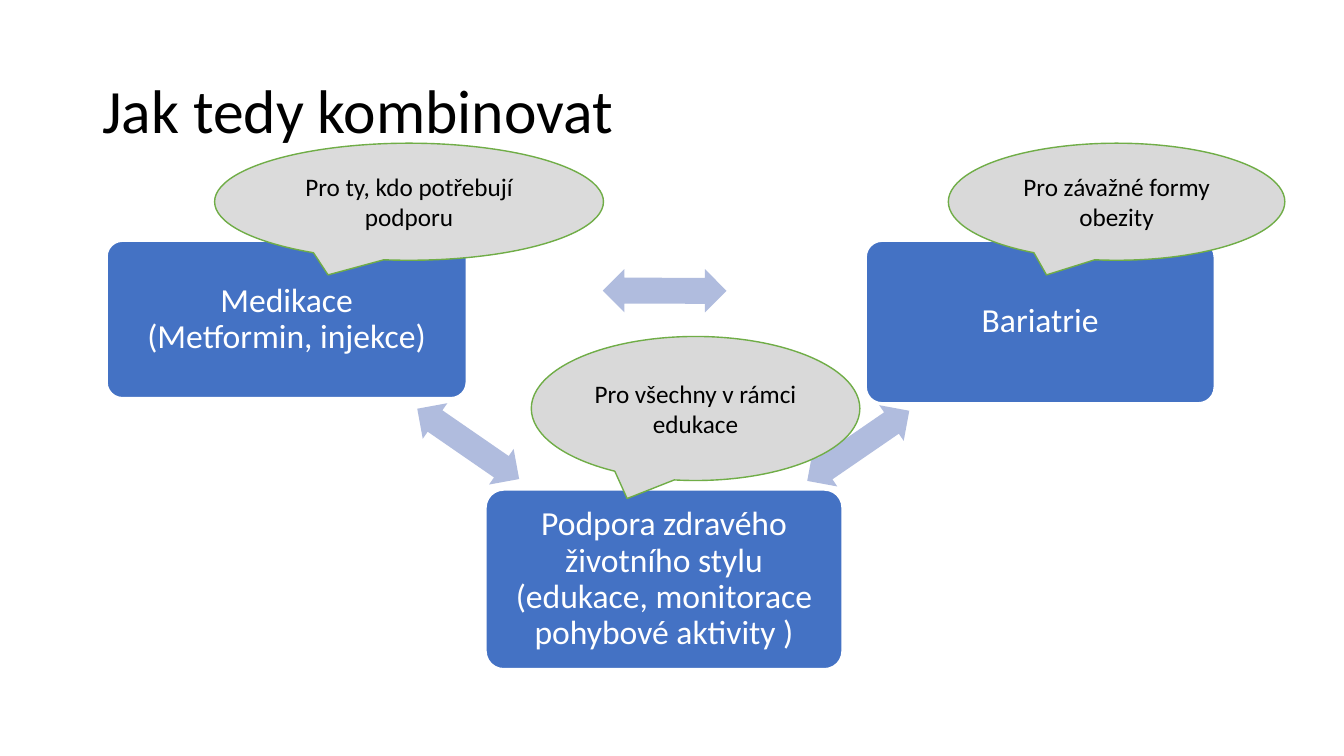
from dataclasses import dataclass

from pptx import Presentation
from pptx.dml.color import RGBColor as Rgb
from pptx.enum.shapes import MSO_SHAPE as Kind
from pptx.enum.text import MSO_ANCHOR as Anchor, PP_ALIGN as Align
from pptx.shapes.autoshape import Shape
from pptx.slide import Slide
from pptx.util import Cm, Pt

HUES = {
    "black": "000000", "white": "FFFFFF", "blue": "4472C4",
    "pale": "B0BCDE", "green": "70AD47", "grey": "D9D9D9", "silver": "DBDBDB",
}
FACE = "Calibri"
INSET = Cm(0.25)
ARROW = (3.12, 1.09)


@dataclass(frozen=True)
class Step:
    text: str
    box: tuple[float, float, float, float]


@dataclass(frozen=True)
class Arrow:
    left: float
    top: float
    turn: float


@dataclass(frozen=True)
class Bubble:
    text: str
    box: tuple[float, float, float, float]
    fill: str = "grey"


# Each step of the cycle is followed by the arrow leading on from it.
CYCLE = [
    Step("Podpora zdravého životního stylu\v(edukace, monitorace pohybové aktivity )",
         (12.24, 12.34, 8.99, 4.52)),
    Arrow(20.07, 10.69, 325.5),
    Step("Bariatrie", (21.82, 6.07, 8.79, 4.09)),
    Arrow(15.19, 6.78, 180.1),
    Step("Medikace\v(Metformin, injekce)", (2.69, 6.07, 9.07, 3.96)),
    Arrow(10.24, 10.64, 34.6),
]
NOTES = [
    Bubble("Pro všechny v rámci edukace", (13.39, 8.48, 8.28, 3.63)),
    Bubble("Pro ty, kdo potřebují podporu", (5.41, 3.61, 9.8, 2.95), "silver"),
    Bubble("Pro závažné formy obezity", (23.9, 3.61, 8.48, 2.95)),
]


def hue(name: str) -> Rgb:
    return Rgb.from_string(HUES[name])


def apply(item: object, form: dict) -> None:
    for key, value in form.items():
        setattr(item, key, value)


def write(shape: Shape, text: str, size: int, ink: str,
          align: Align, space: float = 1.0) -> None:
    frame = shape.text_frame
    apply(frame, {"word_wrap": True, "vertical_anchor": Anchor.MIDDLE, "text": text})
    para = frame.paragraphs[0]
    apply(para, {"alignment": align, "line_spacing": space})
    apply(para.font, {"name": FACE, "size": Pt(size)})
    para.font.color.rgb = hue(ink)


def add(slide: Slide, kind: Kind, box: tuple, fill: str,
        edge: str | None = None, width: float = 1) -> Shape:
    """Add a flat shape, with an outline only if an edge colour is given."""
    shape = slide.shapes.add_shape(kind, *map(Cm, box))
    shape.shadow.inherit = False
    shape.fill.solid()
    shape.fill.fore_color.rgb = hue(fill)
    if edge:
        shape.line.color.rgb = hue(edge)
        shape.line.width = Pt(width)
    else:
        shape.line.fill.background()
    return shape


def add_step(slide: Slide, step: Step) -> None:
    shape = add(slide, Kind.ROUNDED_RECTANGLE, step.box, "blue", "white", 1.5)
    shape.adjustments[0] = 0.1
    sides = ("left", "top", "right", "bottom")
    apply(shape.text_frame, {f"margin_{side}": INSET for side in sides})
    write(shape, step.text, 24, "white", Align.CENTER, 0.9)


def add_arrow(slide: Slide, arrow: Arrow) -> None:
    shape = add(slide, Kind.LEFT_RIGHT_ARROW, (arrow.left, arrow.top, *ARROW), "pale")
    shape.adjustments[0] = 0.6
    shape.rotation = arrow.turn


def add_note(slide: Slide, note: Bubble) -> None:
    shape = add(slide, Kind.OVAL_CALLOUT, note.box, note.fill, "green")
    write(shape, note.text, 18, "black", Align.CENTER)


def main() -> None:
    deck = Presentation()
    apply(deck, {"slide_width": Cm(33.87), "slide_height": Cm(19.05)})
    slide = deck.slides.add_slide(deck.slide_layouts[6])
    title = slide.shapes.add_textbox(Cm(2.33), Cm(1.02), Cm(29.21), Cm(3.68))
    write(title, "Jak tedy kombinovat", 44, "black", Align.LEFT, 0.9)
    for part in CYCLE:
        if isinstance(part, Step):
            add_step(slide, part)
        else:
            add_arrow(slide, part)
    for note in NOTES:
        add_note(slide, note)
    deck.save("out.pptx")


if __name__ == "__main__":
    main()
